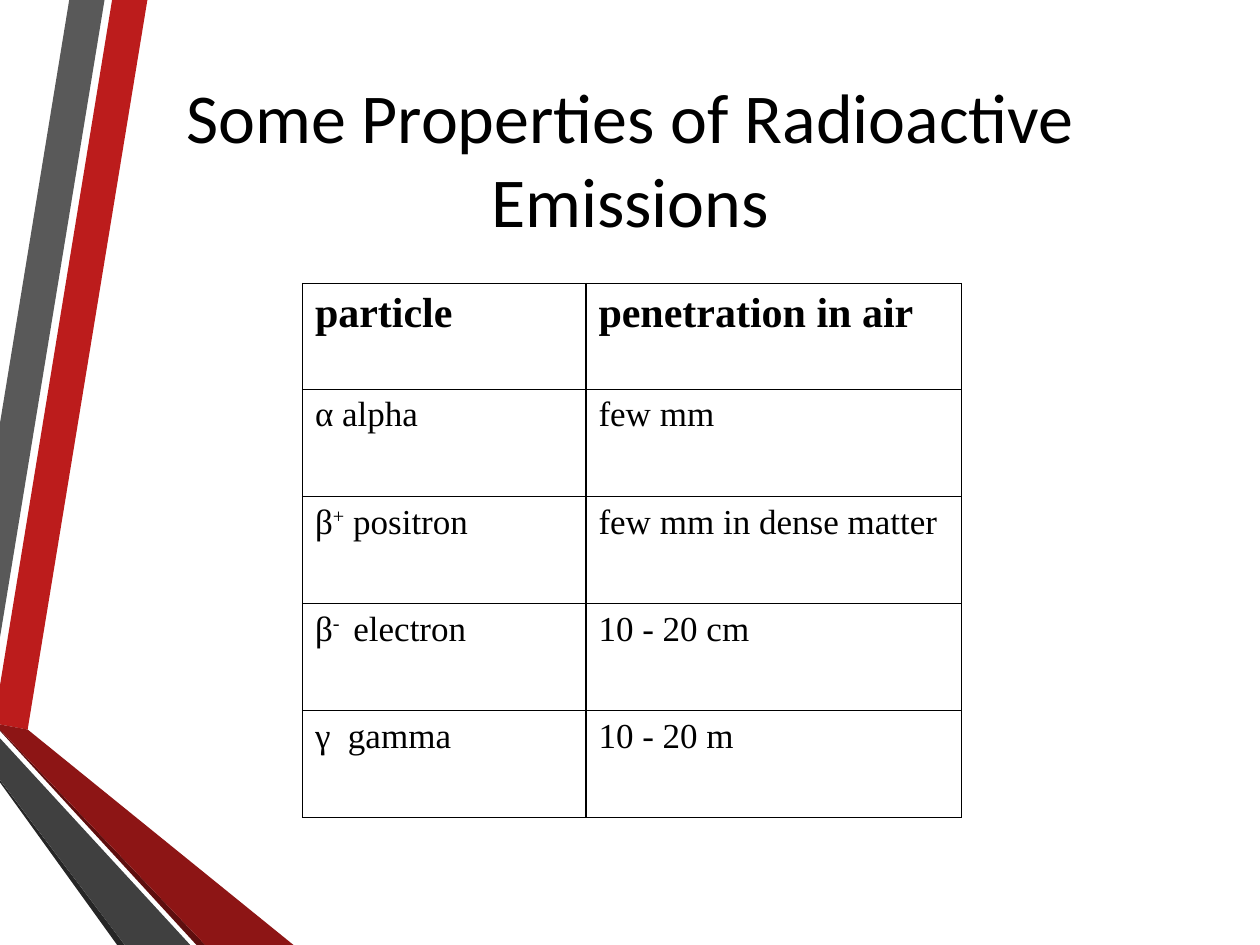
import pptx
import pptx.util
import pptx.dml.color
import pptx.enum.text
import pptx.oxml
import pptx.oxml.ns
from dataclasses import dataclass


@dataclass(frozen=True)
class Theme:
    ink: str = "000000"
    red: str = "BC1C1C"
    wine: str = "8D1515"
    dark: str = "5E0E0E"
    gray: str = "595959"
    coal: str = "404040"
    soot: str = "262626"
    sans: str = "Calibri"
    serif: str = "Times New Roman"
    title: int = 40
    head: int = 24
    body: int = 20
    thin: float = 0.75
    rule: float = 1


THEME = Theme()
ALIGN = pptx.enum.text.PP_ALIGN

# The slide is a grid of 10 columns by 7.5 rows
COLS, ROWS = 10, 7.5
UNIT = pptx.util.Inches(1)

# Ribbons from back to front: colour and corners in grid units
RIBBONS = [
    (THEME.red, [(0, 5.44), (0, 5.75), (0.22, 5.79), (1.17, 0), (0.89, 0)]),
    (THEME.gray, [(0.83, 0), (0.55, 0), (0, 3.36), (0, 5.06)]),
    (THEME.soot, [(0, 6.19), (0, 6.21), (0.93, ROWS), (0.99, ROWS)]),
    (THEME.dark, [(0, 5.79), (0, 5.8), (1.56, ROWS), (1.63, ROWS)]),
    (THEME.wine, [(0, 5.79), (1.63, ROWS), (2.33, ROWS), (0.22, 5.79), (0, 5.75)]),
    (THEME.coal, [(0, 6.19), (0.99, ROWS), (1.51, ROWS), (0, 5.86)]),
]

# Each cell is a list of runs; every second run is raised
CELLS = [
    (["particle"], ["penetration in air"]),
    (["α alpha"], ["few mm"]),
    (["β", "+", " positron"], ["few mm in dense matter"]),
    (["β", "- ", " electron"], ["10 - 20 cm"]),
    (["γ  gamma"], ["10 - 20 m"]),
]
WIDTHS = [2.25, 2.98]
HEIGHTS = [0.84] + [0.85] * 4


def grid(n):
    return round(n * UNIT)


def color(code):
    return pptx.dml.color.RGBColor.from_string(code)


def style(para, face, size, bold=False):
    font = para.font
    font.name, font.size, font.bold = face, pptx.util.Pt(size), bold
    font.color.rgb = color(THEME.ink)


def ribbon(slide, fill, points):
    spots = [(grid(x), grid(y)) for x, y in points]
    pen = slide.shapes.build_freeform(*spots[0], scale=1.0)
    pen.add_line_segments(spots[1:], close=True)
    shape = pen.convert_to_shape()
    shape.shadow.inherit = False
    shape.fill.solid()
    shape.fill.fore_color.rgb = color(fill)
    shape.line.fill.background()


def title(slide, text):
    box = slide.shapes.add_textbox(grid(0.5), grid(0.5), grid(COLS - 1), grid(1.5))
    frame = box.text_frame
    frame.word_wrap = True
    frame.vertical_anchor = pptx.enum.text.MSO_ANCHOR.MIDDLE
    para = frame.paragraphs[0]
    para.text = text
    para.alignment = ALIGN.CENTER
    style(para, THEME.sans, THEME.title)


def border(cell, sides):
    props = cell._tc.get_or_add_tcPr()
    for i, (side, width) in enumerate(sides.items()):
        line = pptx.oxml.parse_xml(
            f'<a:ln{side} {pptx.oxml.ns.nsdecls("a")} w="{pptx.util.Pt(width)}">'
            f'<a:solidFill><a:srgbClr val="{THEME.ink}"/></a:solidFill></a:ln{side}>')
        props.insert(i, line)


def entry(cell, runs, head):
    para = cell.text_frame.paragraphs[0]
    for i, text in enumerate(runs):
        run = para.add_run()
        run.text = text
        if i % 2:
            run.font._element.set("baseline", "30000")
    para.alignment = ALIGN.JUSTIFY
    props = para._p.get_or_add_pPr()
    props.set("marL", str(grid(0.38)))
    props.set("indent", str(grid(-0.38)))
    style(para, THEME.serif, THEME.head if head else THEME.body, head)


def table(slide):
    frame = slide.shapes.add_table(
        len(CELLS), len(WIDTHS), grid(2.4), grid(2.25),
        grid(sum(WIDTHS)), grid(sum(HEIGHTS)))
    tab = frame.table
    tab.first_row = tab.horz_banding = False
    for col, width in zip(tab.columns, WIDTHS):
        col.width = grid(width)
    for r, (row, height) in enumerate(zip(tab.rows, HEIGHTS)):
        row.height = grid(height)
        for c, cell in enumerate(row.cells):
            entry(cell, CELLS[r][c], r == 0)
            cell.fill.background()
            # The outer left and right edges are thinner
            border(cell, {"L": THEME.rule if c else THEME.thin,
                          "R": THEME.thin if c else THEME.rule,
                          "T": THEME.rule, "B": THEME.rule})


def main():
    deck = pptx.Presentation()
    deck.slide_width, deck.slide_height = grid(COLS), grid(ROWS)
    slide = deck.slides.add_slide(deck.slide_layouts[6])
    for fill, points in RIBBONS:
        ribbon(slide, fill, points)
    title(slide, "Some Properties of Radioactive Emissions")
    table(slide)
    deck.save("out.pptx")


if __name__ == "__main__":
    main()
